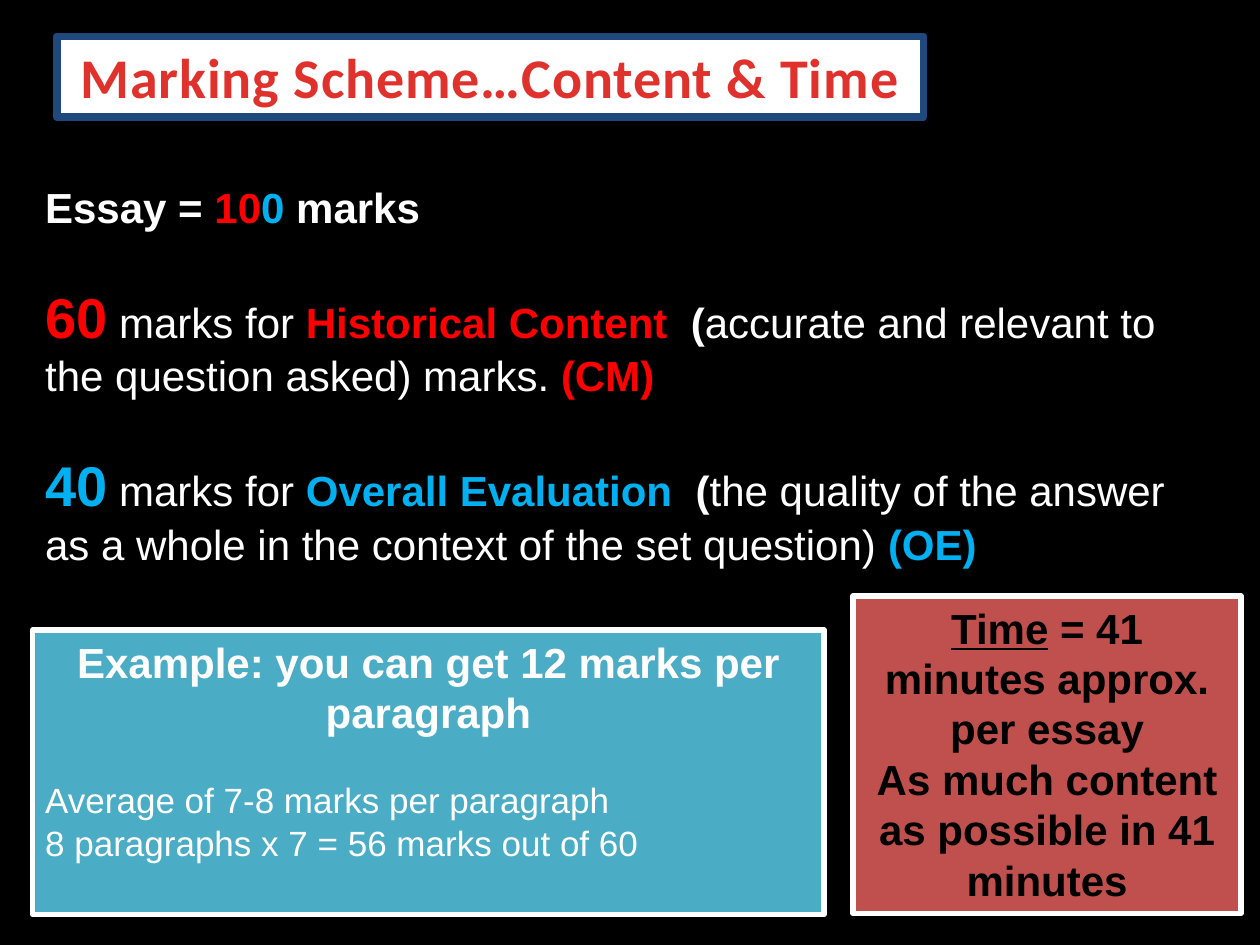
from pptx import Presentation
from pptx.dml.color import RGBColor
from pptx.enum.shapes import MSO_SHAPE
from pptx.enum.text import MSO_ANCHOR, PP_ALIGN
from pptx.util import Inches, Pt

RECT = MSO_SHAPE.RECTANGLE
TOP = MSO_ANCHOR.TOP
LEFT, CENTER = PP_ALIGN.LEFT, PP_ALIGN.CENTER

BLACK = RGBColor(0x00, 0x00, 0x00)
WHITE = RGBColor(0xFF, 0xFF, 0xFF)
RED = RGBColor(0xFF, 0x00, 0x00)
BLUE = RGBColor(0x00, 0xB0, 0xF0)
NAVY = RGBColor(0x1F, 0x49, 0x7D)
TEAL = RGBColor(0x4B, 0xAC, 0xC6)
BRICK = RGBColor(0xC0, 0x50, 0x4D)
SCARLET = RGBColor(0xE0, 0x32, 0x2D)

# Content: each run is (text, font settings that differ from its paragraph)
TITLE = " Marking Scheme…Content & Time "


def criterion(marks, name, detail, code, color):
    return [
        (marks, {"size": Pt(32), "bold": True, "color": color}),
        (" marks for ", {}),
        (name + "  ", {"bold": True, "color": color}),
        ("(", {"bold": True}),
        (detail + " ", {}),
        (code, {"bold": True, "color": color}),
    ]


MARKS = [
    [("Essay = ", {"bold": True}), ("10", {"bold": True, "color": RED}),
     ("0", {"bold": True, "color": BLUE}), (" marks", {"bold": True})],
    criterion("60", "Historical Content",
              "accurate and relevant to the question asked) marks.", "(CM)", RED),
    criterion("40", "Overall Evaluation",
              "the quality of the answer as a whole in the context of the set question)",
              "(OE)", BLUE),
]
HEAD = "Example: you can get 12 marks per paragraph"
SUMS = ["Average of 7-8 marks per paragraph",
        "8 paragraphs x 7 = 56 marks out of 60"]
TIME = [
    [("Time", {"underline": True}), (" = 41 minutes approx. per essay", {})],
    [("As much content as possible in 41 minutes", {})],
]


def add_para(frame, runs, size, color, bold=False, align=LEFT, gap=0, face="Arial"):
    para = frame.paragraphs[0]
    if para.runs:
        para = frame.add_paragraph()
    para.alignment = align
    para.space_before = Pt(gap)
    font = para.font
    font.name, font.size, font.bold = face, Pt(size), bold
    font.color.rgb = color
    for text, style in runs:
        run = para.add_run()
        run.text = text
        for key, value in style.items():
            if key == "color":
                run.font.color.rgb = value
            else:
                setattr(run.font, key, value)
    return para


def add_box(slide, place, fill, edge, width):
    box = slide.shapes.add_shape(RECT, *map(Inches, place))
    box.shadow.inherit = False
    box.fill.solid()
    box.fill.fore_color.rgb = fill
    box.line.color.rgb = edge
    box.line.width = Pt(width)
    frame = box.text_frame
    frame.word_wrap = True
    frame.vertical_anchor = TOP
    return frame


def main():
    deck = Presentation()
    deck.slide_width, deck.slide_height = Inches(10), Inches(7.5)
    slide = deck.slides.add_slide(deck.slide_layouts[6])
    slide.background.fill.solid()
    slide.background.fill.fore_color.rgb = BLACK

    # Marks breakdown
    body = slide.shapes.add_textbox(*map(Inches, (0.26, 0.99, 9.45, 4.01))).text_frame
    body.word_wrap = True
    body.margin_top = Inches(0.45)
    for row, runs in enumerate(MARKS):
        add_para(body, runs, 24, WHITE, gap=29 if row else 0)

    # Worked example
    demo = add_box(slide, (0.26, 5, 6.28, 2.26), TEAL, WHITE, 3)
    add_para(demo, [(HEAD, {})], 24, WHITE, True, CENTER)
    for row, text in enumerate(SUMS):
        add_para(demo, [(text, {})], 20, WHITE, gap=0 if row else 24)

    # Time limit
    limit = add_box(slide, (6.77, 4.73, 3.08, 2.52), BRICK, WHITE, 3)
    for runs in TIME:
        add_para(limit, runs, 24, BLACK, True, CENTER)

    # Title
    head = add_box(slide, (0.45, 0.29, 6.88, 0.64), WHITE, NAVY, 4.5)
    head.word_wrap = False
    para = add_para(head, [(TITLE, {})], 32, SCARLET, True, CENTER, face="Calibri")
    para.runs[0].font._element.set("spc", "50")

    deck.save("out.pptx")


if __name__ == "__main__":
    main()
